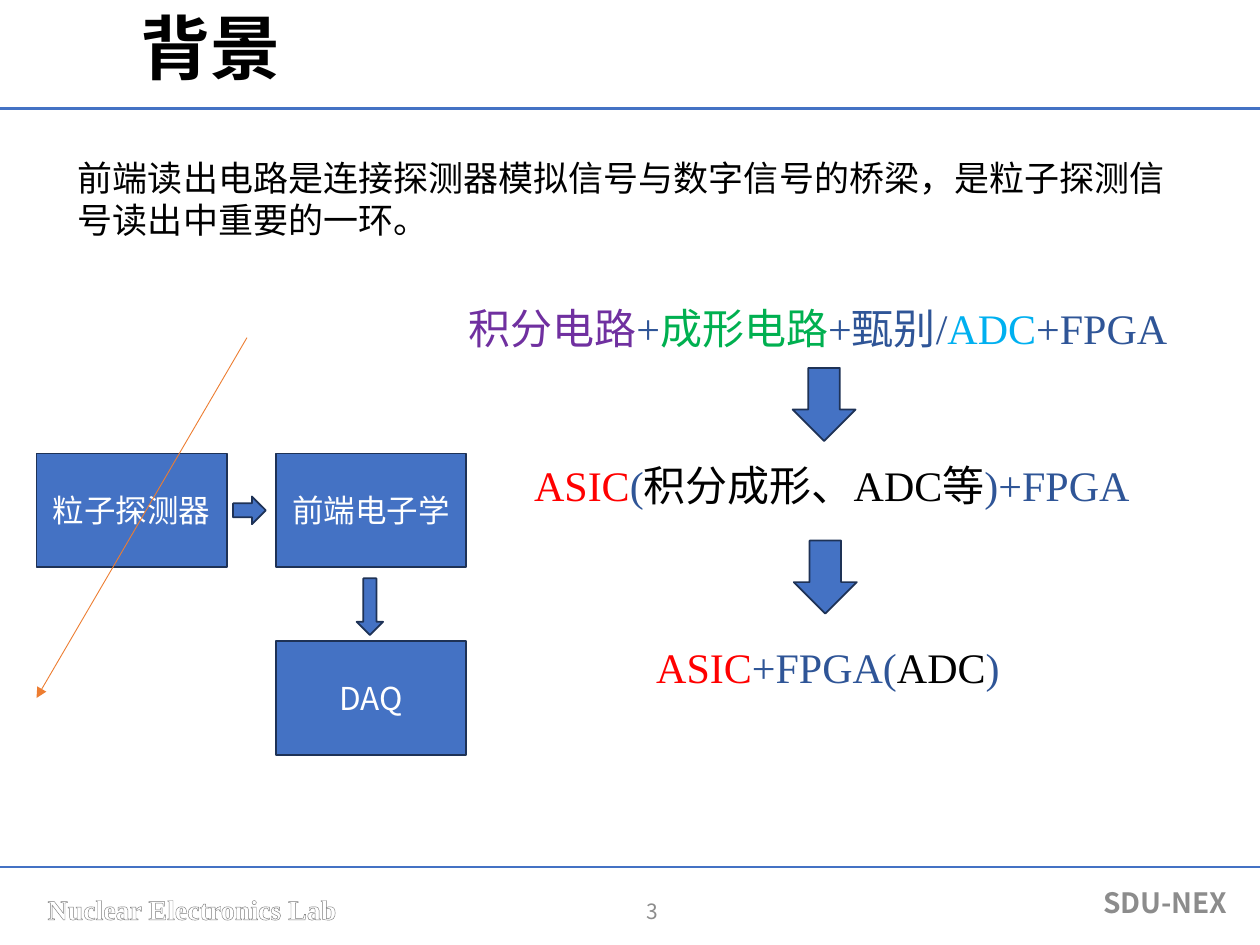
from lxml import etree
from pptx import Presentation
from pptx.dml.color import RGBColor
from pptx.enum.shapes import MSO_CONNECTOR as Connector, MSO_SHAPE as Preset
from pptx.enum.text import MSO_ANCHOR as Anchor, MSO_AUTO_SIZE as AutoSize, PP_ALIGN as Align
from pptx.oxml import parse_xml
from pptx.oxml.ns import nsdecls, qn
from pptx.util import Inches, Pt

SANS, SERIF = "Noto Sans CJK SC", "Times New Roman"
COLORS = {
    "blue": "4472C4", "edge": "1E3256", "navy": "2F5597", "purple": "7030A0",
    "green": "00B050", "sky": "00B0F0", "red": "FF0000", "orange": "ED7D31",
    "black": "000000", "white": "FFFFFF", "gray": "8C8C8C",
    "outline": "7D7D7D", "shade": "7F7F7F",
}


def rgb(name):
    return RGBColor.from_string(COLORS[name])


class SlideBuilder:
    """Holds the text style and the current page, and draws each kind of element."""

    def __init__(self, page):
        self.page = page
        self.style = {"size": Pt(18), "name": SANS, "bold": False}

    def fill_text(self, shape, spans, align=Align.LEFT, anchor=Anchor.TOP,
                  auto_size=AutoSize.NONE, line_spacing=None, **font):
        frame = shape.text_frame
        layout = {"word_wrap": True, "auto_size": auto_size, "vertical_anchor": anchor}
        for key, value in layout.items():
            setattr(frame, key, value)
        para = frame.paragraphs[0]
        para.alignment = align
        para.line_spacing = line_spacing
        for text, color in spans:
            span = para.add_run()
            span.text = text
            span.font.color.rgb = rgb(color)
            for key, value in (self.style | font).items():
                setattr(span.font, key, value)
            latin = span.font._element.find(qn("a:latin"))
            latin.addnext(parse_xml(f'<a:ea {nsdecls("a")} typeface="{SANS}"/>'))

    def text(self, at, spans, **options):
        box = self.page.shapes.add_textbox(*map(Inches, at))
        self.fill_text(box, spans, **options)
        return box

    def shape(self, preset, at, rotation=0):
        shape = self.page.shapes.add_shape(preset, *map(Inches, at))
        shape.rotation = rotation
        shape.shadow.inherit = False
        shape.fill.solid()
        shape.fill.fore_color.rgb = rgb("blue")
        shape.line.color.rgb = rgb("edge")
        shape.line.width = Pt(1)
        return shape

    def block(self, left, top, label):
        block = self.shape(Preset.RECTANGLE, (left, top, 1.51, 0.9))
        self.fill_text(block, [(label, "white")], align=Align.CENTER, anchor=Anchor.MIDDLE)

    def line(self, start, end, color, width, arrow=False):
        line = self.page.shapes.add_connector(Connector.STRAIGHT, *map(Inches, start + end))
        line.line.color.rgb = rgb(color)
        line.line.width = Pt(width)
        properties = line._element.spPr
        if arrow:
            etree.SubElement(properties.find(qn("a:ln")), qn("a:tailEnd"), type="triangle")
        etree.SubElement(properties, qn("a:effectLst"))

    def outlined_text(self, at, label, **options):
        box = self.text(at, [(label, "white")], **options)
        props = box.text_frame.paragraphs[0].runs[0].font._element
        stops = "".join(
            f'<a:gs pos="{percent * 1000}"><a:srgbClr val="{COLORS[color]}"/></a:gs>'
            for percent, color in ((0, "white"), (9, "white"), (50, "shade"),
                                   (79, "white"), (100, "white")))
        gradient = parse_xml(f'<a:gradFill {nsdecls("a")}><a:gsLst>{stops}</a:gsLst>'
                             '<a:lin ang="5400000"/></a:gradFill>')
        props.replace(props.find(qn("a:solidFill")), gradient)
        props.insert(0, parse_xml(
            f'<a:ln {nsdecls("a")} w="{int(Pt(0.83))}"><a:solidFill>'
            f'<a:srgbClr val="{COLORS["outline"]}"/></a:solidFill></a:ln>'))


def main():
    deck = Presentation()
    deck.slide_width, deck.slide_height = Inches(10), Inches(7.5)
    page = SlideBuilder(deck.slides.add_slide(deck.slide_layouts[6]))

    for y in (0.86, 6.88):
        page.line((0, y), (10, y), "blue", 1.5)
    page.outlined_text((0.16, 7.03, 2.73, 0.37), "Nuclear Electronics Lab", align=Align.CENTER,
                       auto_size=AutoSize.SHAPE_TO_FIT_TEXT, size=Pt(16), name=SERIF, bold=True)
    footer = {"align": Align.RIGHT, "anchor": Anchor.MIDDLE}
    page.text((7.36, 6.96, 2.48, 0.4), [("SDU-NEX", "gray")], size=Pt(16), bold=True, **footer)
    page.text((3.83, 6.96, 1.49, 0.54), [("3", "gray")], size=Pt(12), **footer)
    page.text((1.02, 0.06, 7.08, 0.86), [("背景", "black")],
              line_spacing=0.9, size=Pt(40), bold=True)

    body = {"name": SERIF, "auto_size": AutoSize.SHAPE_TO_FIT_TEXT}
    page.text((0.52, 1.19, 8.83, 0.77),
              [("前端读出电路是连接探测器模拟信号与数字信号的桥梁，是粒子探测信号读出中重要的一环。", "black")],
              size=Pt(20), **body)
    stages = [
        ((3.62, 2.35, 5.87, 0.5), [("积分电路", "purple"), ("+", "navy"), ("成形电路", "green"),
                                   ("+甄别/", "navy"), ("ADC", "sky"), ("+FPGA", "navy")]),
        ((4.14, 3.6, 5.01, 0.5), [("ASIC", "red"), ("(", "navy"), ("积分成形、ADC等", "black"),
                                  (")+FPGA", "navy")]),
        ((5.11, 5.04, 3.22, 0.5), [("ASIC", "red"), ("+FPGA(", "navy"), ("ADC", "black"),
                                   (")", "navy")]),
    ]
    for at, spans in stages:
        page.text(at, spans, size=Pt(24), **body)

    arrows = [((6.25, 2.96, 0.58, 0.5), 90), ((6.26, 4.33, 0.58, 0.5), 90),
              ((1.85, 3.94, 0.26, 0.22), 0), ((2.71, 4.71, 0.45, 0.21), 90)]
    for at, rotation in arrows:
        page.shape(Preset.RIGHT_ARROW, at, rotation)
    page.block(0.29, 3.6, "粒子探测器")
    page.line((1.96, 2.68), (0.29, 5.54), "orange", 0.5, arrow=True)
    page.block(2.19, 3.6, "前端电子学")
    page.block(2.19, 5.09, "DAQ")
    deck.save("out.pptx")


if __name__ == "__main__":
    main()
